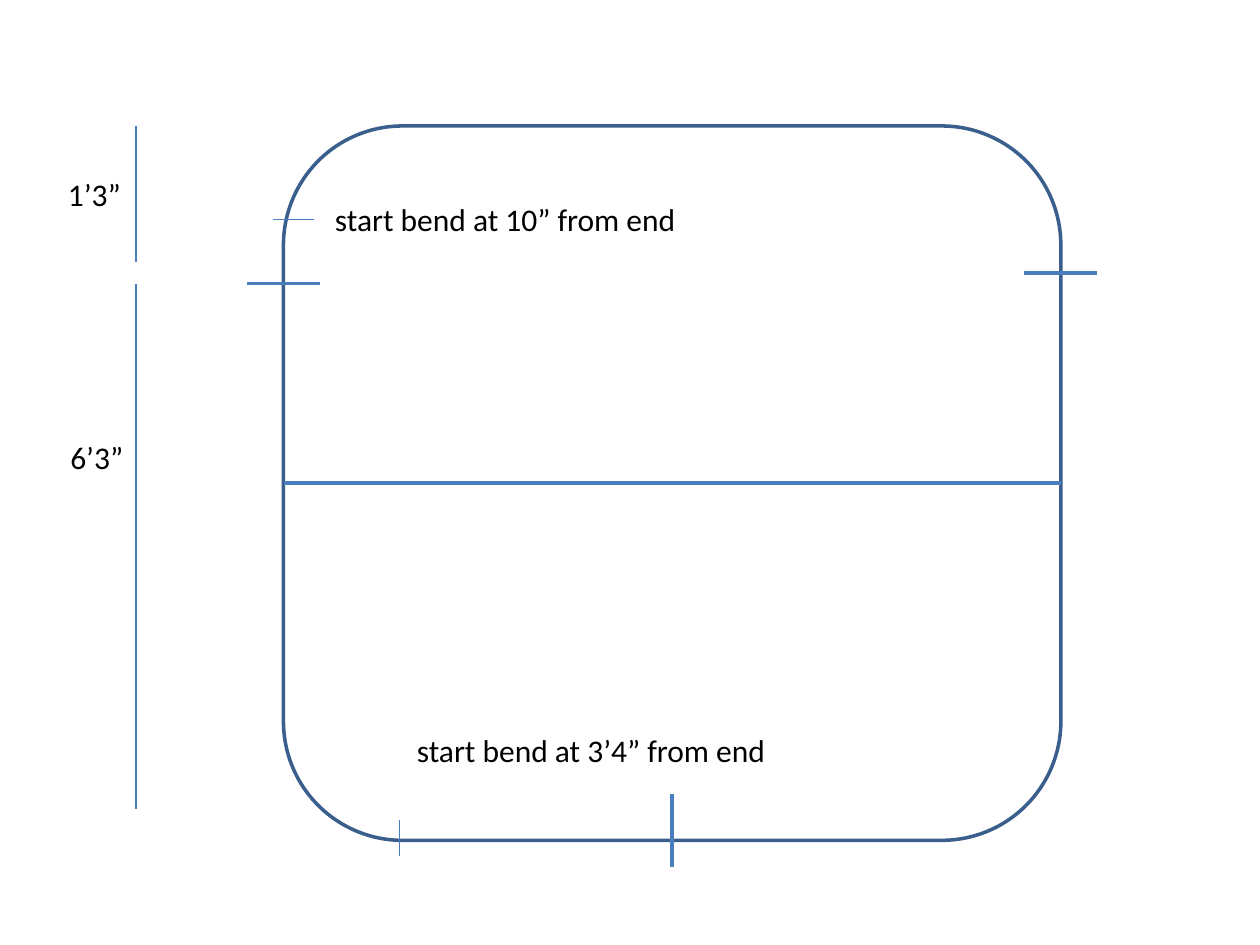
from lxml import etree
from pptx import Presentation
from pptx.dml.color import RGBColor
from pptx.enum import shapes, text
from pptx.oxml import ns
from pptx.util import Inches, Pt

COLORS = {"frame": "3A5F8C", "mark": "4B7EBC", "text": "000000"}
THIN, THICK = 0.75, 2.25


def add_line(slide, start, end, width):
    line = slide.shapes.add_connector(
        shapes.MSO_CONNECTOR.STRAIGHT, *(Inches(value) for value in (*start, *end)))
    line.line.color.rgb = RGBColor.from_string(COLORS["mark"])
    line.line.width = Pt(width)
    etree.SubElement(line._element.spPr, ns.qn("a:effectLst"))
    return line


def add_label(slide, words, left, top, width):
    box = slide.shapes.add_textbox(Inches(left), Inches(top), Inches(width), Inches(0.4))
    frame = box.text_frame
    frame.word_wrap = False
    frame.auto_size = text.MSO_AUTO_SIZE.SHAPE_TO_FIT_TEXT
    run = frame.paragraphs[0].add_run()
    run.text = words
    run.font.name = "Calibri"
    run.font.size = Pt(18)
    run.font.color.rgb = RGBColor.from_string(COLORS["text"])


def add_tube_frame(slide, left, top, width, height):
    """Rounded frame with its crossbar, joint marks and bend marks."""
    frame = slide.shapes.add_shape(
        shapes.MSO_SHAPE.ROUNDED_RECTANGLE,
        Inches(left), Inches(top), Inches(width), Inches(height))
    frame.shadow.inherit = False
    frame.fill.background()
    frame.line.color.rgb = RGBColor.from_string(COLORS["frame"])
    frame.line.width = Pt(2)

    right, bottom, middle = left + width, top + height, top + height / 2
    crossbar = add_line(slide, (left, middle), (right, middle), THICK)
    crossbar.begin_connect(frame, 1)
    crossbar.end_connect(frame, 3)

    # Marks across the sides: x, y, half length, line width
    for x, y, half, weight in ((left, top + 1.25, 0.29, THICK),
                               (right, top + 1.17, 0.29, THICK),
                               (left + 0.08, top + 0.74, 0.165, THIN)):
        add_line(slide, (x - half, y), (x + half, y), weight)
    # Marks across the bottom
    for x, y, half, weight in ((left + width / 2, bottom - 0.08, 0.29, THICK),
                               (left + 0.92, bottom - 0.02, 0.145, THIN)):
        add_line(slide, (x, y - half), (x, y + half), weight)

    add_label(slide, "start bend at 10” from end", left + 0.31, top + 0.54, 2.94)
    add_label(slide, "start bend at 3’4” from end", left + 0.96, bottom - 0.92, 3)


def add_dimensions(slide, x, top):
    """Two vertical dimension lines with their lengths on the left."""
    for words, start, end, label_left, label_top, width in (
            ("1’3”", 0, 1.08, -0.64, 0.34, 0.62),
            ("6’3”", 1.25, 5.42, -0.62, 2.43, 0.63)):
        add_line(slide, (x, top + start), (x, top + end), THIN)
        add_label(slide, words, x + label_left, top + label_top, width)


def main():
    presentation = Presentation()
    presentation.slide_width, presentation.slide_height = Inches(10), Inches(7.5)
    slide = presentation.slides.add_slide(presentation.slide_layouts[6])
    add_tube_frame(slide, 2.25, 1, 6.17, 5.67)
    add_dimensions(slide, 1.08, 1)
    presentation.save("out.pptx")


if __name__ == "__main__":
    main()
